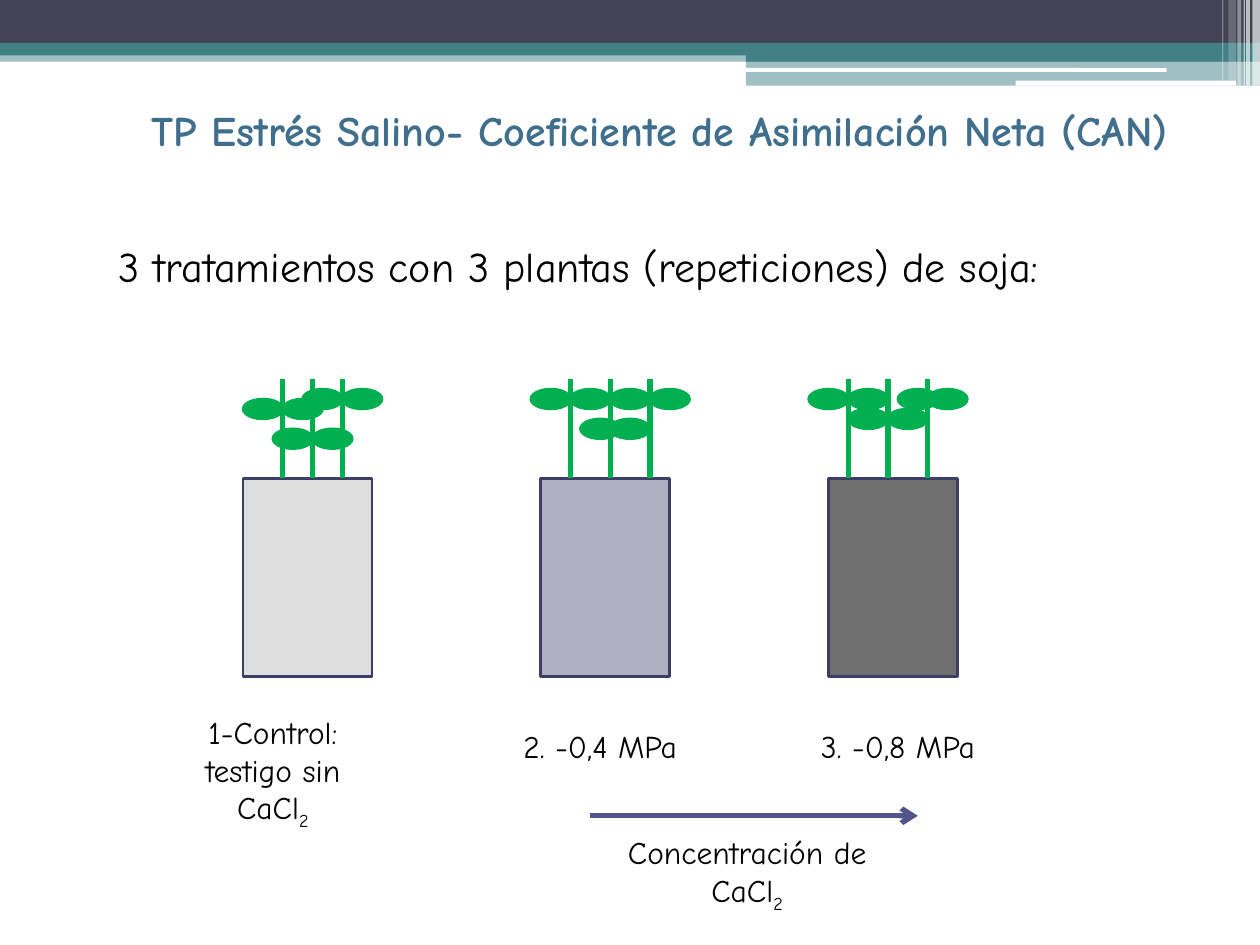
from lxml.etree import SubElement
from pptx import Presentation
from pptx.dml.color import RGBColor
from pptx.enum.shapes import MSO_CONNECTOR, MSO_SHAPE
from pptx.enum.text import MSO_ANCHOR, PP_ALIGN
from pptx.oxml.ns import qn
from pptx.util import Inches, Pt

WIDTH, HEIGHT = 10, 7.5
CELL = WIDTH / 127
LEFT, TOP = 1.93, 3.01
FONT = "Comic Neue"
GREEN, NAVY, TEAL, WHITE = "00B050", "3D3E66", "438086", "FFFFFF"
STEM_ROWS, POT_COLS, POT_ROWS = 10, 13, 20
LEAF_COLS, LEAF_ROWS = 4, 2

BANDS = [
    (0, 0.4, 10, 0.09, TEAL, 50),
    (0, 0, 10, 0.34, "424456", 100),
    (0, 0.34, 10, 0.1, TEAL, 100),
    (5.92, 0.39, 4.08, 0.1, TEAL, 100),
    (5.92, 0.48, 4.08, 0.2, TEAL, 50),
]
WHITE_BARS = [(5.91, 0.54, 3.35, 0.03), (8.06, 0.64, 1.75, 0.04)]
STRIPES = [
    (9.94, 0.06, 0.68, 65),
    (9.89, 0.03, 0.68, 65),
    (9.87, 0.01, 0.68, 60),
    (9.82, 0.03, 0.68, 40),
    (9.75, 0.06, 0.64, 20),
    (9.7, 0.01, 0.64, 30),
]
TREATMENTS = [
    (0, "DEDEDE", [(4, 2, 4), (7, 5, 4), (10, 1, 4)]),
    (30, "AEB0C1", [(3, 1, 4), (7, 4, 3), (11, 1, 4)]),
    (59, "6F6F6F", [(2, 1, 4), (6, 3, 4), (10, 1, 3)]),
]


def rgb(value):
    return RGBColor.from_string(value)


def grid(column, row, columns, rows):
    return LEFT + column * CELL, TOP + row * CELL, columns * CELL, rows * CELL


def add_block(slide, box, fill, kind=MSO_SHAPE.RECTANGLE, outline=None, opacity=100):
    block = slide.shapes.add_shape(kind, *map(Inches, box))
    block.shadow.inherit = False
    block.fill.solid()
    block.fill.fore_color.rgb = rgb(fill)
    if opacity < 100:
        tint = block.fill._xPr.find(".//" + qn("a:srgbClr"))
        SubElement(tint, qn("a:alpha"), val=str(opacity * 1000))
    if outline:
        block.line.color.rgb = rgb(outline)
        block.line.width = Pt(1.5)
    else:
        block.line.fill.background()


def add_line(slide, start, end, color, arrow=False):
    x1, y1, _, _ = grid(*start, 0, 0)
    x2, y2, _, _ = grid(*end, 0, 0)
    line = slide.shapes.add_connector(
        MSO_CONNECTOR.STRAIGHT, *map(Inches, (x1, y1, x2, y2)))
    line.line.color.rgb = rgb(color)
    line.line.width = Pt(3)
    if arrow:
        SubElement(line.line._get_or_add_ln(), qn("a:tailEnd"), type="arrow")
    SubElement(line._element.spPr, qn("a:effectLst"))


def write(frame, text, size=18, color="000000", bold=False, subscript=None):
    frame.word_wrap = True
    frame.vertical_anchor = MSO_ANCHOR.TOP
    paragraph = frame.paragraphs[0]
    paragraph.alignment = PP_ALIGN.CENTER
    for part in filter(None, (text, subscript)):
        run = paragraph.add_run()
        run.text = part
        run.font.name = FONT
        run.font.size = Pt(size)
        run.font.bold = bold
        run.font.color.rgb = rgb(color)
        if part == subscript:
            run._r.get_or_add_rPr().set("baseline", "-25000")


def add_label(slide, box, text, **style):
    label = slide.shapes.add_textbox(*map(Inches, grid(*box)))
    write(label.text_frame, text, **style)


def add_title(slide, text):
    title = slide.shapes.title
    title.left, title.top, title.width, title.height = map(
        Inches, (1.1, 0.78, 8.27, 0.91))
    write(title.text_frame, text, size=24, color="406F8D", bold=True)


def add_header(slide):
    for *box, fill, opacity in BANDS:
        add_block(slide, box, fill, opacity=opacity)
    for box in WHITE_BARS:
        add_block(slide, box, WHITE, kind=MSO_SHAPE.ROUNDED_RECTANGLE)
    for left, width, height, opacity in STRIPES:
        add_block(slide, (left, 0, width, height), WHITE, opacity=opacity)


def add_plant(slide, stem, leaf_row, left_reach):
    add_line(slide, (stem, 0), (stem, STEM_ROWS), GREEN)
    for column in (stem - left_reach, stem):
        add_block(slide, grid(column, leaf_row, LEAF_COLS, LEAF_ROWS), GREEN,
                  kind=MSO_SHAPE.OVAL, outline=GREEN)


def add_pot(slide, column, fill, plants):
    add_block(slide, grid(column, STEM_ROWS, POT_COLS, POT_ROWS), fill, outline=NAVY)
    for offset, leaf_row, left_reach in plants:
        add_plant(slide, column + offset, leaf_row, left_reach)


def main():
    deck = Presentation()
    deck.slide_width, deck.slide_height = Inches(WIDTH), Inches(HEIGHT)
    slide = deck.slides.add_slide(deck.slide_layouts[5])

    add_header(slide)
    add_title(slide, "TP Estrés Salino- Coeficiente de Asimilación Neta (CAN)")
    add_label(slide, (-18, -14.6, 105, 6.4),
              "3 tratamientos con 3 plantas (repeticiones) de soja: ", size=24)
    for column, fill, plants in TREATMENTS:
        add_pot(slide, column, fill, plants)

    add_label(slide, (-8, 33, 22, 12.8), "1-Control: testigo sin CaCl", subscript="2")
    add_label(slide, (25, 34.4, 22, 5), "2. -0,4 MPa")
    add_label(slide, (55, 34.4, 22, 5), "3. -0,8 MPa")
    add_line(slide, (35, 44), (68, 44), "53548A", arrow=True)
    add_label(slide, (36.8, 45.1, 28, 9), "Concentración de CaCl", subscript="2")
    deck.save("out.pptx")


if __name__ == "__main__":
    main()
